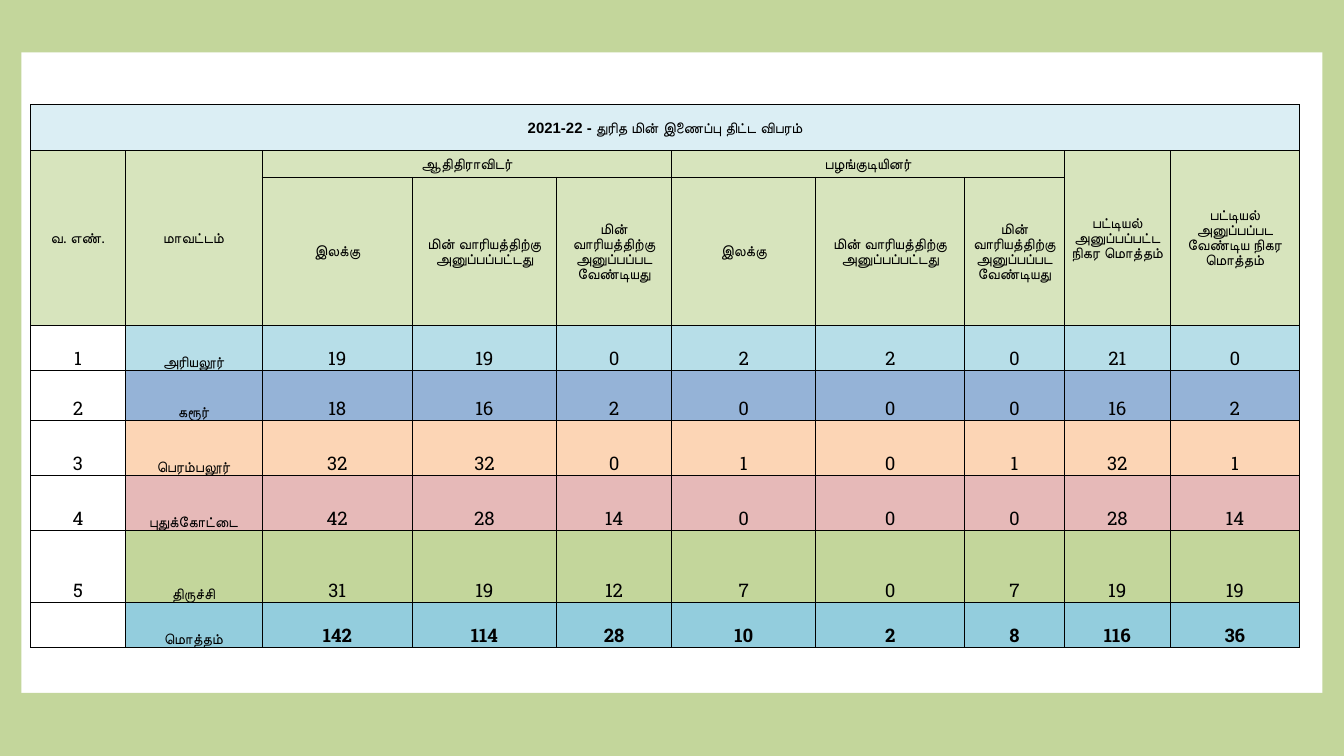
from lxml import etree
from pptx import Presentation
from pptx.dml.color import RGBColor
from pptx.enum.shapes import MSO_SHAPE
from pptx.enum.text import MSO_ANCHOR, PP_ALIGN
from pptx.oxml.ns import qn
from pptx.util import Inches, Pt

RECTANGLE = MSO_SHAPE.RECTANGLE
MIDDLE, BOTTOM = MSO_ANCHOR.MIDDLE, MSO_ANCHOR.BOTTOM
CENTER = PP_ALIGN.CENTER

BLACK = RGBColor(0x00, 0x00, 0x00)
WHITE = RGBColor(0xFF, 0xFF, 0xFF)
GREEN = RGBColor(0xC3, 0xD6, 0x9B)
PALE_GREEN = RGBColor(0xD7, 0xE4, 0xBD)
PALE_BLUE = RGBColor(0xDB, 0xEE, 0xF4)
AQUA = RGBColor(0xB7, 0xDE, 0xE8)
BLUE = RGBColor(0x95, 0xB3, 0xD7)
PEACH = RGBColor(0xFC, 0xD5, 0xB5)
ROSE = RGBColor(0xE6, 0xB9, 0xB8)
TEAL = RGBColor(0x93, 0xCD, 0xDD)

LABEL_FONT, NUMBER_FONT, TITLE_FONT = "Calibri", "Roboto Slab", "Arial"
SLIDE_WIDTH, SLIDE_HEIGHT = 10, 10 * 9 / 16
TABLE_LEFT, TABLE_TOP = 0.23, 0.78
COLUMN_WIDTHS = [0.7, 1.02, 1.12, 1.07, 0.86, 1.07, 1.11, 0.74, 0.79, 0.96]
ROW_HEIGHTS = [0.34, 0.2, 1.1, 0.34, 0.37, 0.41, 0.41, 0.53, 0.34]
TOP_BAND, BOTTOM_BAND, SIDE_BAND = 0.39, 0.47, 0.16

TITLE = "2021-22 - துரித மின் இணைப்பு திட்ட விபரம்"
TALL_HEADINGS = {
    0: "வ. எண்.",
    1: "மாவட்டம்",
    8: "பட்டியல் அனுப்பப்பட்ட நிகர மொத்தம்",
    9: "பட்டியல் அனுப்பப்பட வேண்டிய நிகர மொத்தம்",
}
GROUP_HEADINGS = {2: "ஆதிதிராவிடர்", 5: "பழங்குடியினர்"}
SUBHEADINGS = [
    "இலக்கு",
    "மின் வாரியத்திற்கு அனுப்பப்பட்டது",
    "மின் வாரியத்திற்கு அனுப்பப்பட வேண்டியது",
]
FIRST_DISTRICT_ROW = 3
DISTRICTS = [
    ("1", "அரியலூர்", AQUA, [19, 19, 0, 2, 2, 0, 21, 0]),
    ("2", "கரூர்", BLUE, [18, 16, 2, 0, 0, 0, 16, 2]),
    ("3", "பெரம்பலூர்", PEACH, [32, 32, 0, 1, 0, 1, 32, 1]),
    ("4", "புதுக்கோட்டை", ROSE, [42, 28, 14, 0, 0, 0, 28, 14]),
    ("5", "திருச்சி", GREEN, [31, 19, 12, 7, 0, 7, 19, 19]),
    ("", "மொத்தம்", TEAL, [142, 114, 28, 10, 2, 8, 116, 36]),
]


def add_band(slide, left, top, width, height):
    """Add one plain green edge of the slide's frame."""
    band = slide.shapes.add_shape(
        RECTANGLE, Inches(left), Inches(top), Inches(width), Inches(height))
    band.shadow.inherit = False
    band.fill.solid()
    band.fill.fore_color.rgb = GREEN
    band.line.fill.background()


def add_frame(slide):
    """Surround the slide with four green bands."""
    add_band(slide, 0, 0, SLIDE_WIDTH, TOP_BAND)
    add_band(slide, 0, SLIDE_HEIGHT - BOTTOM_BAND, SLIDE_WIDTH, BOTTOM_BAND)
    for left in (0, SLIDE_WIDTH - SIDE_BAND):
        add_band(slide, left, 0, SIDE_BAND, SLIDE_HEIGHT)


def draw_borders(cell):
    """Give a cell thin black borders on all four sides."""
    properties = cell._tc.get_or_add_tcPr()
    for side in ("a:lnL", "a:lnR", "a:lnT", "a:lnB"):
        border = etree.SubElement(properties, qn(side), w=str(Pt(0.5)))
        fill = etree.SubElement(border, qn("a:solidFill"))
        etree.SubElement(fill, qn("a:srgbClr"), val=str(BLACK))


def write_cell(cell, text, color, anchor=MIDDLE, font=LABEL_FONT, size=8, bold=False):
    """Write a cell's text and set its borders, fill, margins and font."""
    cell.text = text
    draw_borders(cell)
    cell.fill.solid()
    cell.fill.fore_color.rgb = color
    cell.margin_left = cell.margin_right = cell.margin_top = Inches(0.01)
    cell.margin_bottom = 0
    cell.vertical_anchor = anchor
    paragraph = cell.text_frame.paragraphs[0]
    paragraph.alignment = CENTER
    paragraph.font.name = font
    paragraph.font.size = Pt(size)
    paragraph.font.bold = bold
    paragraph.font.color.rgb = BLACK
    if not text:
        etree.SubElement(paragraph._p, qn("a:endParaRPr"), sz=str(size * 100))


def heading_texts():
    """Map each row and column of the headings to its text."""
    texts = {(0, 0): TITLE}
    for column, heading in (TALL_HEADINGS | GROUP_HEADINGS).items():
        texts[1, column] = heading
    for group in GROUP_HEADINGS:
        for offset, subheading in enumerate(SUBHEADINGS):
            texts[2, group + offset] = subheading
    return texts


def fill_headings(table):
    """Write and merge the title row and the two heading rows."""
    texts = heading_texts()
    last_column = len(COLUMN_WIDTHS) - 1
    for column in range(last_column + 1):
        write_cell(table.cell(0, column), texts.get((0, column), ""), PALE_BLUE,
                   font=TITLE_FONT, bold=True)
        for row in (1, 2):
            write_cell(table.cell(row, column), texts.get((row, column), ""), PALE_GREEN)
    table.cell(0, 0).merge(table.cell(0, last_column))
    for column in TALL_HEADINGS:
        table.cell(1, column).merge(table.cell(2, column))
    for column in GROUP_HEADINGS:
        table.cell(1, column).merge(table.cell(1, column + len(SUBHEADINGS) - 1))


def fill_districts(table):
    """Write one coloured row per district and the total row."""
    for row, (number, name, color, counts) in enumerate(DISTRICTS, FIRST_DISTRICT_ROW):
        is_total = not number
        for column, value in enumerate([number, name, *counts]):
            font, size = (LABEL_FONT, 8) if column == 1 else (NUMBER_FONT, 10)
            write_cell(table.cell(row, column), str(value), color if column else WHITE,
                       BOTTOM, font, size, is_total)


def add_district_table(slide):
    """Add the table of connections by district."""
    table = slide.shapes.add_table(
        len(ROW_HEIGHTS), len(COLUMN_WIDTHS), Inches(TABLE_LEFT), Inches(TABLE_TOP),
        Inches(sum(COLUMN_WIDTHS)), Inches(sum(ROW_HEIGHTS))).table
    for column, width in zip(table.columns, COLUMN_WIDTHS):
        column.width = Inches(width)
    for row, height in zip(table.rows, ROW_HEIGHTS):
        row.height = Inches(height)
    table.first_row = table.horz_banding = False
    fill_headings(table)
    fill_districts(table)


def main():
    """Build and save the slide."""
    presentation = Presentation()
    presentation.slide_width = Inches(SLIDE_WIDTH)
    presentation.slide_height = Inches(SLIDE_HEIGHT)
    slide = presentation.slides.add_slide(presentation.slide_layouts[6])
    add_district_table(slide)
    add_frame(slide)
    presentation.save("out.pptx")


if __name__ == "__main__":
    main()
